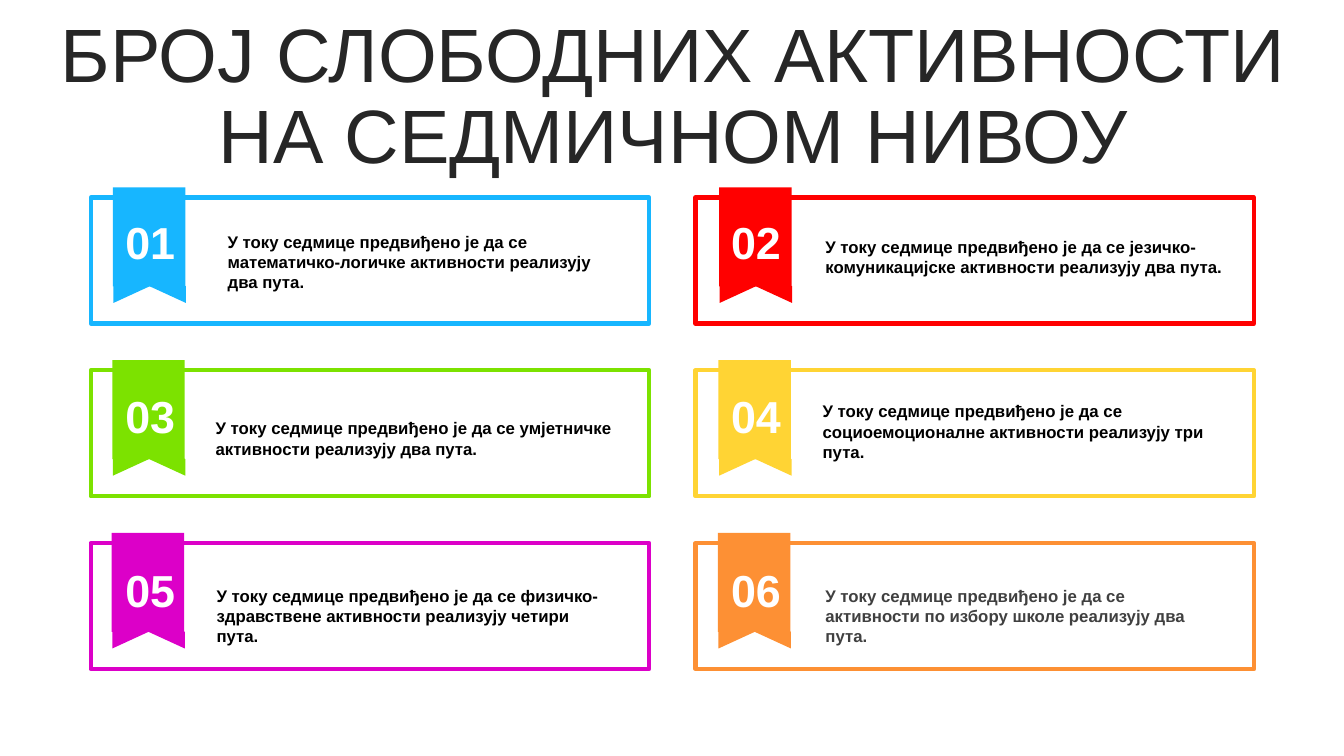
"""Build a slide with six numbered activity cards."""
import pptx
import pptx.dml.color
import pptx.enum.shapes
import pptx.enum.text
import pptx.util

Pt = pptx.util.Pt
RGBColor = pptx.dml.color.RGBColor
Shape = pptx.enum.shapes.MSO_SHAPE
Align = pptx.enum.text.PP_ALIGN
Anchor = pptx.enum.text.MSO_ANCHOR

WHITE = RGBColor(0xFF, 0xFF, 0xFF)
BLACK = RGBColor(0, 0, 0)
GRAY = RGBColor(0x40, 0x40, 0x40)
CHARCOAL = RGBColor(0x26, 0x26, 0x26)
BLUE = RGBColor(0x17, 0xB6, 0xFF)
RED = RGBColor(0xFF, 0, 0)
GREEN = RGBColor(0x7C, 0xE2, 0)
YELLOW = RGBColor(0xFF, 0xD4, 0x34)
MAGENTA = RGBColor(0xDC, 0, 0xC8)
ORANGE = RGBColor(0xFD, 0x90, 0x34)

TITLE = "БРОЈ СЛОБОДНИХ АКТИВНОСТИ НА СЕДМИЧНОМ НИВОУ"
INTRO = "У току седмице предвиђено је да се "
CARD_LEFT, CARD_TOP = 64.8, 141.1
CARD_WIDTH, CARD_HEIGHT = 399, 90
COLUMN_PITCH, ROW_PITCH = 432, 123.4
RIBBON_WIDTH, RIBBON_HEIGHT, TAIL_HEIGHT = 51.8, 70.6, 23.8

# Card colour, text, text colour, text left, top and height
CARDS = [
    (BLUE, "математичко-логичке активности реализују два пута.",
     BLACK, 155.5, 162, 51),
    (RED, "језичко-комуникацијске активности реализују два пута.",
     BLACK, 582.5, 165.6, 36),
    (GREEN, "умјетничке активности реализују два пута.",
     BLACK, 146.9, 295.2, 36),
    (YELLOW, "социоемоционалне активности реализују три пута.",
     BLACK, 580.5, 283, 51),
    (MAGENTA, "физичко-здравствeне активности реализују четири пута.",
     BLACK, 147.6, 414.7, 51),
    (ORANGE, "активности по избору школе реализују два пута.",
     GRAY, 582.5, 414.7, 51),
]


def add_text(slide, text, left, top, width, height, *, size, color,
             bold=False, align=Align.LEFT, anchor=Anchor.TOP, spacing=1.0):
    """Add a wrapped text box with one formatted paragraph."""
    box = slide.shapes.add_textbox(Pt(left), Pt(top), Pt(width), Pt(height))
    frame = box.text_frame
    frame.word_wrap = True
    frame.vertical_anchor = anchor
    paragraph = frame.paragraphs[0]
    paragraph.alignment = align
    paragraph.line_spacing = spacing
    run = paragraph.add_run()
    run.text = text
    run.font.name = "Arial"
    run.font.size = Pt(size)
    run.font.bold = bold
    run.font.color.rgb = color


def add_filled_shape(shapes, kind, left, top, width, height, fill, line=None):
    """Add a preset shape with a solid fill and an optional outline."""
    shape = shapes.add_shape(kind, Pt(left), Pt(top), Pt(width), Pt(height))
    shape.shadow.inherit = False
    shape.fill.solid()
    shape.fill.fore_color.rgb = fill
    if line is None:
        shape.line.fill.background()
    else:
        shape.line.color.rgb = line
        shape.line.width = Pt(3)
    return shape


def add_ribbon(slide, left, top, color):
    """Add a grouped ribbon: a rectangle with a notched tail."""
    group = slide.shapes.add_group_shape()
    tail = add_filled_shape(
        group.shapes, Shape.CHEVRON,
        left + (RIBBON_WIDTH - TAIL_HEIGHT) / 2 + 0.4,
        top + RIBBON_HEIGHT - RIBBON_WIDTH / 2,
        TAIL_HEIGHT, RIBBON_WIDTH, color)
    tail.rotation = 270
    add_filled_shape(group.shapes, Shape.RECTANGLE, left, top,
                     RIBBON_WIDTH, RIBBON_HEIGHT, color)


def add_card(slide, index, color, text, text_color, text_left, text_top,
             text_height):
    """Add a framed card with its ribbon, number and text."""
    row, column = divmod(index, 2)
    left = CARD_LEFT + column * COLUMN_PITCH
    top = CARD_TOP + row * ROW_PITCH
    add_filled_shape(slide.shapes, Shape.RECTANGLE, left, top,
                     CARD_WIDTH, CARD_HEIGHT, WHITE, color)
    add_ribbon(slide, left + 15.8 + column - 0.4 * row, top - 7.2, color)
    add_text(slide, f"{index + 1:02}", left + 16.6 + 0.7 * column,
             top + 8.7 + 0.6 * row, RIBBON_WIDTH, 46, size=32, color=WHITE,
             bold=True, align=Align.CENTER, anchor=Anchor.MIDDLE)
    add_text(slide, INTRO + text, text_left, text_top, 298, text_height,
             size=12, color=text_color, bold=True)


def main():
    """Create the presentation and save it."""
    presentation = pptx.Presentation()
    presentation.slide_width, presentation.slide_height = Pt(960), Pt(540)
    slide = presentation.slides.add_slide(presentation.slide_layouts[6])
    add_text(slide, TITLE, 25.2, 41.8, 911.5, 56.9, size=54, color=CHARCOAL,
             align=Align.CENTER, anchor=Anchor.MIDDLE, spacing=0.9)
    for index, card in enumerate(CARDS):
        add_card(slide, index, *card)
    presentation.save("out.pptx")


if __name__ == "__main__":
    main()
